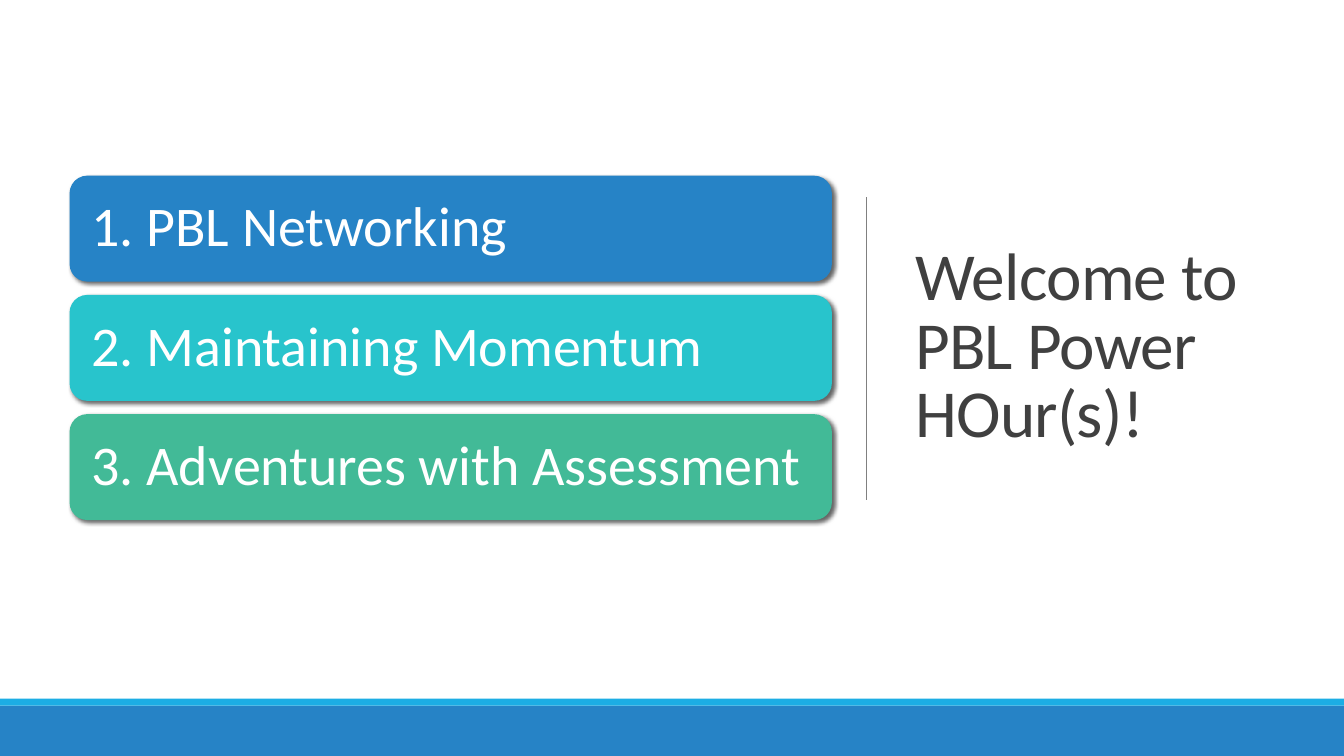
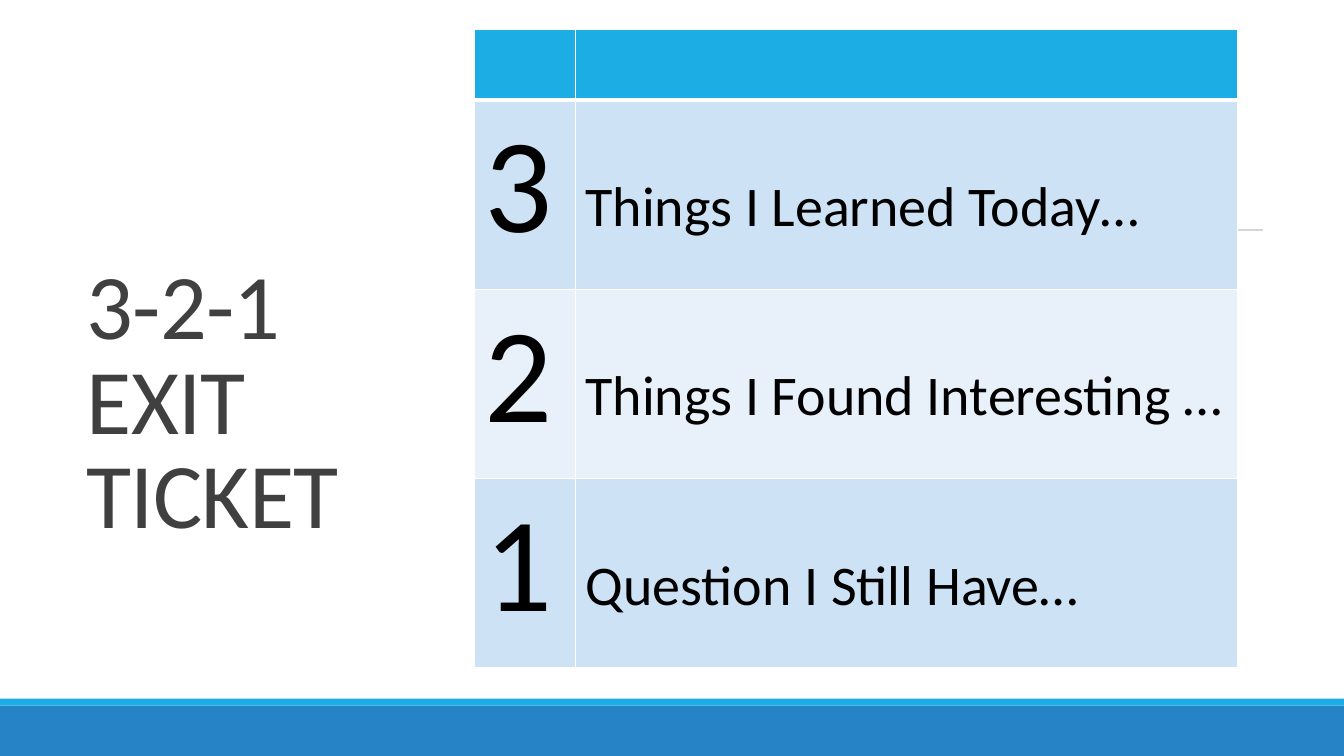
from lxml import etree
from pptx import Presentation
from pptx.dml.color import RGBColor
from pptx.enum.shapes import MSO_CONNECTOR, MSO_SHAPE
from pptx.enum.text import MSO_ANCHOR, MSO_AUTO_SIZE, PP_ALIGN
from pptx.oxml import parse_xml
from pptx.oxml.ns import nsdecls, qn
from pptx.util import Pt

RECTANGLE, ROUNDED = MSO_SHAPE.RECTANGLE, MSO_SHAPE.ROUNDED_RECTANGLE
STRAIGHT = MSO_CONNECTOR.STRAIGHT
TOP, MIDDLE, BOTTOM = MSO_ANCHOR.TOP, MSO_ANCHOR.MIDDLE, MSO_ANCHOR.BOTTOM
LEFT, NO_FIT = PP_ALIGN.LEFT, MSO_AUTO_SIZE.NONE

FONT = "Calibri"
WIDTH, HEIGHT = 960, 540
TITLE_ONLY = 5
COLORS = {
    "blue": "2683C6",
    "sky": "1CADE4",
    "teal": "28C4CC",
    "green": "42BA97",
    "title": "404040",
    "rule": "808080",
    "white": "FFFFFF",
    "black": "000000",
    "row_dark": "CDE3F5",
    "row_light": "E8F1FA",
}


def rgb(name):
    """Return the named colour."""
    return RGBColor.from_string(COLORS[name])


def write(frame, text, size, color, anchor=TOP, line_spacing=None, tracking=None):
    """Write one left-aligned paragraph into a text frame."""
    frame.word_wrap = True
    frame.vertical_anchor = anchor
    para = frame.paragraphs[0]
    para.alignment = LEFT
    if line_spacing:
        para.line_spacing = line_spacing
    span = para.add_run()
    span.text = text
    span.font.name = FONT
    span.font.size = Pt(size)
    span.font.color.rgb = rgb(color)
    if tracking:
        span.font._element.set("spc", str(int(tracking * 100)))


def add_box(page, kind, box, fill):
    """Add a filled preset shape without outline or inherited shadow."""
    shape = page.shapes.add_shape(kind, *map(Pt, box))
    shape.shadow.inherit = False
    shape.fill.solid()
    shape.fill.fore_color.rgb = rgb(fill)
    shape.line.fill.background()
    return shape


def add_rule(page, x1, y1, x2, y2, opacity=100):
    """Add a thin grey line."""
    rule = page.shapes.add_connector(STRAIGHT, Pt(x1), Pt(y1), Pt(x2), Pt(y2))
    rule.line.width = Pt(0.5)
    rule.line.color.rgb = rgb("rule")
    properties = rule._element.spPr
    if opacity < 100:
        color = properties.find(".//" + qn("a:srgbClr"))
        etree.SubElement(color, qn("a:alpha"), val=str(opacity * 1000))
    etree.SubElement(properties, qn("a:effectLst"))


def add_page(deck, title, box, size, anchor):
    """Add a slide with the shared bands and title style."""
    page = deck.slides.add_slide(deck.slide_layouts[TITLE_ONLY])
    add_box(page, RECTANGLE, (0, 504, WIDTH, 36), "blue")
    add_box(page, RECTANGLE, (0, 499, WIDTH, 5), "sky")
    holder = page.shapes.title
    holder.left, holder.top, holder.width, holder.height = map(Pt, box)
    write(holder.text_frame, title, size, "title", anchor, 0.85, -0.5)
    holder.text_frame.auto_size = NO_FIT
    return page


def add_soft_shadow(shape):
    """Give a shape a small shadow towards the lower right."""
    effects = shape._element.spPr.find(qn("a:effectLst"))
    effects.append(parse_xml(
        f'<a:outerShdw {nsdecls("a")} blurRad="{Pt(3)}" dist="{Pt(2)}" '
        'dir="2700000" algn="ctr" rotWithShape="0">'
        f'<a:srgbClr val="{COLORS["black"]}"><a:alpha val="60000"/></a:srgbClr>'
        '</a:outerShdw>'))


def add_agenda(page, box, items, gap):
    """Stack equal cards in a box, one for each (text, fill) item."""
    left, top, width, height = box
    card_height = (height - gap * (len(items) - 1)) / len(items)
    for index, (text, fill) in enumerate(items):
        card_top = top + index * (card_height + gap)
        card = add_box(page, ROUNDED, (left, card_top, width, card_height), fill)
        add_soft_shadow(card)
        frame = card.text_frame
        frame.margin_left, frame.margin_right = Pt(12), Pt(6)
        write(frame, text, 40, "white", MIDDLE, 0.9)


def style_cell(cell, fill, top_width=1, bottom_width=1):
    """Fill a cell and draw its white borders."""
    properties = cell._tc.get_or_add_tcPr()
    widths = {"lnL": 1, "lnR": 1, "lnT": top_width, "lnB": bottom_width}
    for tag, width in widths.items():
        properties.append(parse_xml(
            f'<a:{tag} {nsdecls("a")} w="{Pt(width)}"><a:solidFill>'
            f'<a:srgbClr val="{COLORS["white"]}"/></a:solidFill></a:{tag}>'))
    cell.fill.solid()
    cell.fill.fore_color.rgb = rgb(fill)


def add_ticket(page, box, prompts, number_width, header_height):
    """Add a table with an empty header and one row for each prompt."""
    left, top, width, height = box
    table = page.shapes.add_table(len(prompts) + 1, 2, *map(Pt, box)).table
    table.columns[0].width = Pt(number_width)
    table.columns[1].width = Pt(width - number_width)
    table.rows[0].height = Pt(header_height)
    for column in range(2):
        style_cell(table.cell(0, column), "sky", bottom_width=3)
    for row, (number, prompt) in enumerate(prompts, 1):
        table.rows[row].height = Pt((height - header_height) / len(prompts))
        for column, (text, size) in enumerate(((number, 96), (prompt, 40))):
            cell = table.cell(row, column)
            style_cell(cell, "row_dark" if row % 2 else "row_light",
                       top_width=3 if row == 1 else 1)
            write(cell.text_frame, text, size, "black")
        cell.margin_top = Pt(52.4)


def build_welcome(deck):
    """Build the welcome slide with its agenda."""
    page = add_page(deck, "Welcome to PBL Power HOur(s)!",
                    (646.5, 50, 266, 398), 48, MIDDLE)
    add_rule(page, 618.5, 141, 618.5, 357)
    add_agenda(page, (49.7, 125.5, 544.5, 246), (
        ("1. PBL Networking", "blue"),
        ("2. Maintaining Momentum", "teal"),
        ("3. Adventures with Assessment", "green"),
    ), gap=9.5)


def build_exit_ticket(deck):
    """Build the exit ticket slide with its table."""
    page = add_page(deck, "3-2-1 EXIT TICKET", (54.7, 81.5, 253, 313), 66, BOTTOM)
    add_rule(page, 621.5, 164.3, 902, 164.3, opacity=90)
    add_ticket(page, (338.7, 21.2, 545.5, 456), (
        ("3", "Things I Learned Today…"),
        ("2", "Things I Found Interesting …"),
        ("1", "Question I Still Have…"),
    ), number_width=72.3, header_height=50)


def main():
    """Build and save the deck."""
    deck = Presentation()
    deck.slide_width, deck.slide_height = Pt(WIDTH), Pt(HEIGHT)
    build_welcome(deck)
    build_exit_ticket(deck)
    deck.save("out.pptx")


if __name__ == "__main__":
    main()
